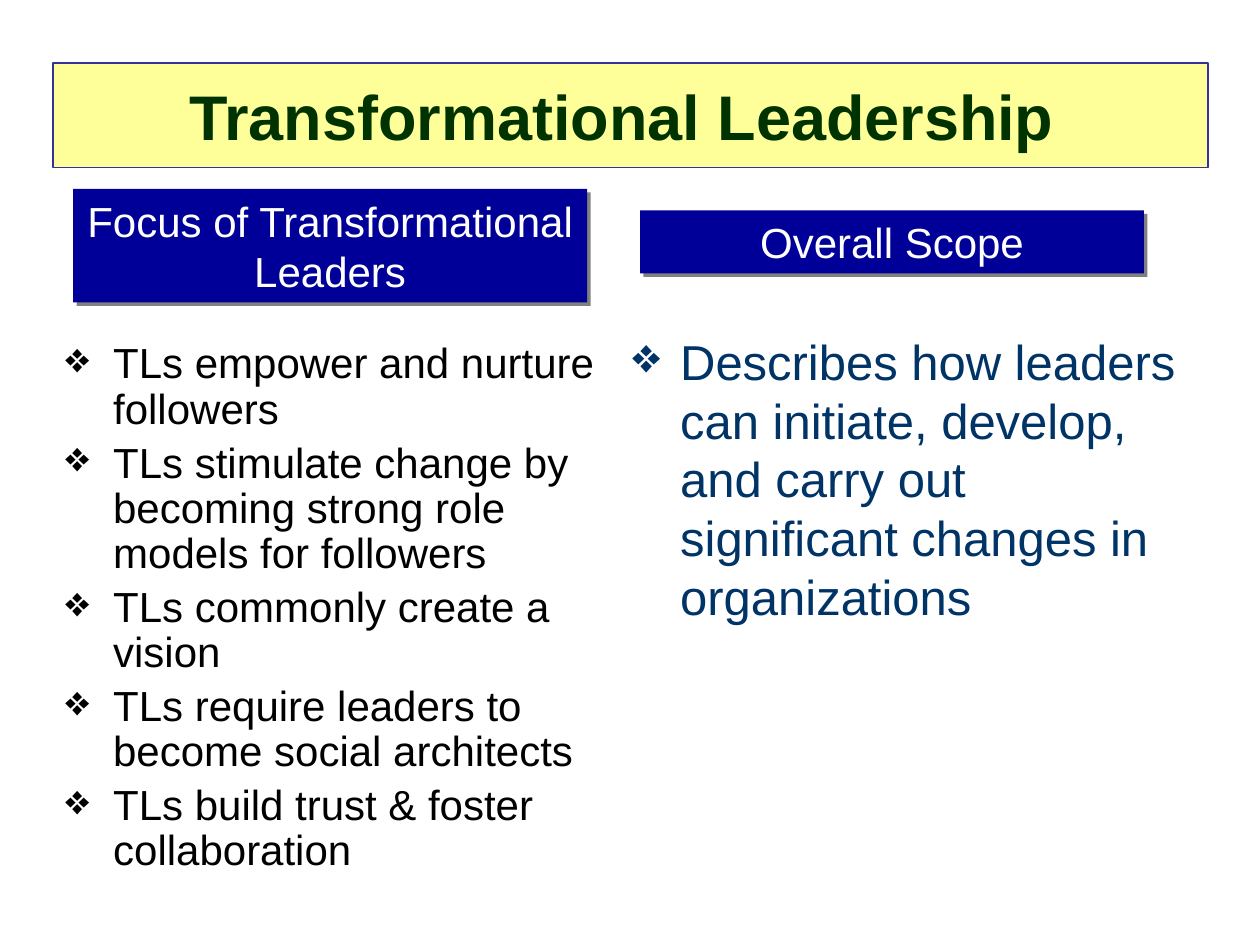
from dataclasses import dataclass

from lxml import etree
from pptx import Presentation
from pptx.dml.color import RGBColor
from pptx.enum.shapes import MSO_SHAPE
from pptx.enum.text import MSO_ANCHOR, MSO_AUTO_SIZE, PP_ALIGN
from pptx.oxml.ns import qn
from pptx.util import Inches, Pt

RECTANGLE = MSO_SHAPE.RECTANGLE
MIDDLE, TOP = MSO_ANCHOR.MIDDLE, MSO_ANCHOR.TOP
CENTER, LEFT = PP_ALIGN.CENTER, PP_ALIGN.LEFT
GROW = MSO_AUTO_SIZE.SHAPE_TO_FIT_TEXT


@dataclass(frozen=True)
class Theme:
    font: str = "Arial"
    title_fill: str = "FFFF99"
    title_line: str = "333399"
    title_text: str = "003300"
    heading_fill: str = "000099"
    heading_text: str = "FFFFFF"
    shadow: str = "808080"
    focus_text: str = "000000"
    scope_text: str = "003366"
    title_size: int = 36
    text_size: int = 24
    scope_size: int = 28


class SlideBuilder:
    def __init__(self, slide, theme):
        self.slide = slide
        self.theme = theme

    def style(self, paragraph, size, color, align, bold=False):
        paragraph.alignment = align
        for run in paragraph.runs:
            run.font.name = self.theme.font
            run.font.size = Pt(size)
            run.font.bold = bold
            run.font.color.rgb = RGBColor.from_string(color)

    def box(self, area, text, fill, size, color, bold=False):
        box = self.slide.shapes.add_shape(RECTANGLE, *map(Inches, area))
        box.shadow.inherit = False
        box.fill.solid()
        box.fill.fore_color.rgb = RGBColor.from_string(fill)
        box.line.fill.background()
        frame = box.text_frame
        frame.word_wrap = True
        frame.text = text
        self.style(frame.paragraphs[0], size, color, CENTER, bold)
        return box

    def title(self, area, text):
        theme = self.theme
        banner = self.box(area, text, theme.title_fill, theme.title_size, theme.title_text, True)
        banner.line.color.rgb = RGBColor.from_string(theme.title_line)
        banner.line.width = Pt(1)
        banner.text_frame.vertical_anchor = MIDDLE

    def heading(self, area, text):
        theme = self.theme
        heading = self.box(area, text, theme.heading_fill, theme.text_size, theme.heading_text)
        heading.text_frame.vertical_anchor = TOP
        heading.text_frame.auto_size = GROW
        effects = heading._element.spPr.find(qn("a:effectLst"))
        shadow = etree.SubElement(effects, qn("a:outerShdw"), dist=str(Pt(2.8)),
                                  dir="2700000", algn="ctr", rotWithShape="0")
        etree.SubElement(shadow, qn("a:srgbClr"), val=theme.shadow)

    def bullets(self, area, items, size, color, line_spacing=1.0):
        frame = self.slide.shapes.add_textbox(*map(Inches, area)).text_frame
        frame.word_wrap = True
        frame.text = "\n".join(items)
        for index, paragraph in enumerate(frame.paragraphs):
            properties = paragraph._p.get_or_add_pPr()
            properties.set("marL", str(Inches(0.38)))
            properties.set("indent", str(Inches(-0.38)))
            etree.SubElement(properties, qn("a:buChar"), char="❖")
            paragraph.line_spacing = line_spacing
            paragraph.space_before = Pt(0.2 * size if index else 0)
            self.style(paragraph, size, color, LEFT)


def main():
    presentation = Presentation()
    presentation.slide_width = Inches(10)
    presentation.slide_height = Inches(7.5)
    slide = presentation.slides.add_slide(presentation.slide_layouts[6])
    theme = Theme()
    builder = SlideBuilder(slide, theme)

    builder.title((0.42, 0.5, 9.17, 0.83), "Transformational Leadership ")
    focus_points = [
        "TLs empower and nurture followers",
        "TLs stimulate change by becoming strong role models for followers",
        "TLs commonly create a vision",
        "TLs require leaders to become social architects",
        "TLs build trust & foster collaboration",
    ]
    builder.bullets((0.42, 2.67, 4.67, 4.42), focus_points, theme.text_size, theme.focus_text, 0.9)
    scope_points = [
        "Describes how leaders can initiate, develop, and carry out "
        "significant changes in organizations",
    ]
    builder.bullets((4.92, 2.58, 4.58, 2.83), scope_points, theme.scope_size, theme.scope_text)
    builder.heading((0.58, 1.5, 4.08, 0.9), "Focus of Transformational Leaders")
    builder.heading((5.08, 1.67, 4, 0.5), "Overall Scope")

    presentation.save("out.pptx")


if __name__ == "__main__":
    main()
